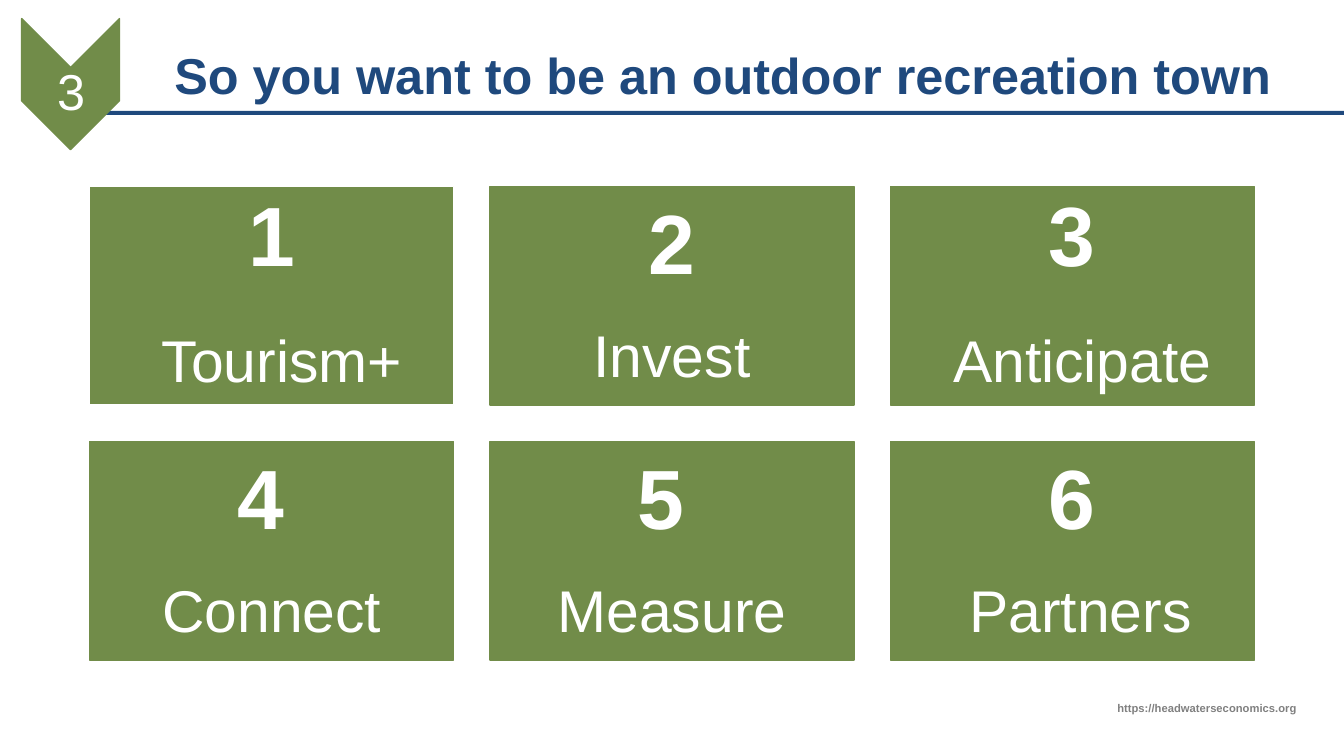
"""Build the slide with six steps for an outdoor recreation town."""
from dataclasses import dataclass
from pptx import Presentation
from pptx.dml.color import RGBColor as Rgb
from pptx.enum.shapes import MSO_SHAPE as Kind
from pptx.enum.text import MSO_ANCHOR as Anchor, PP_ALIGN as Align
from pptx.util import Inches, Pt

TITLE = "So you want to be an outdoor recreation town"
BADGE = "3"
SITE = "https://headwaterseconomics.org"
STEPS = [
    [[("1", 60)], [(" ", 52), ("Tourism+", 42)]],
    [[("2", 60)], [("Invest", 42)]],
    [[("3", 60)], [(" ", 52), ("Anticipate", 42)]],
    [[("4", 60), (" ", 57)], [("Connect", 42)]],
    [[("5", 60), (" ", 57)], [("Measure", 42)]],
    [[("6", 60)], [(" Partners", 42)]],
]
COLS = 3
LEFT, TOP, WIDE, HIGH = 0.89, 1.85, 3.61, 2.17
STEP_X, STEP_Y = 3.97, 2.53


@dataclass(frozen=True)
class Theme:
    """Colours, font and type sizes."""
    green: Rgb = Rgb(0x71, 0x8C, 0x49)
    navy: Rgb = Rgb(0x1F, 0x49, 0x7D)
    white: Rgb = Rgb(0xFF, 0xFF, 0xFF)
    grey: Rgb = Rgb(0x80, 0x80, 0x80)
    font: str = "Arial"
    head: int = 36
    digit: int = 60
    foot: int = 8
    gap: float = 24.7


theme = Theme()


def style(run, size, color, bold=False):
    """Format one run."""
    font = run.font
    font.name, font.size, font.bold = theme.font, Pt(size), bold
    font.color.rgb = color


def add_block(slide, kind, box, fill, line=None):
    """Add a filled shape."""
    shape = slide.shapes.add_shape(kind, *map(Inches, box))
    shape.shadow.inherit = False
    shape.fill.solid()
    shape.fill.fore_color.rgb = fill
    if line is None:
        shape.line.fill.background()
    else:
        shape.line.color.rgb = line
        shape.line.width = Pt(1)
    return shape


def set_inset(frame, size):
    """Set all four margins and centre the text vertically."""
    frame.margin_left = frame.margin_right = Inches(size)
    frame.margin_top = frame.margin_bottom = Inches(size)
    frame.vertical_anchor = Anchor.MIDDLE


def add_label(slide, box, text, size, color, align, bold=True, space=None):
    """Add a text box with one line."""
    frame = slide.shapes.add_textbox(*map(Inches, box)).text_frame
    frame.word_wrap = True
    frame.text = text
    para = frame.paragraphs[0]
    para.alignment, para.line_spacing = align, space
    style(para.runs[0], size, color, bold)
    return frame


def add_step(slide, index, lines):
    """Add one card of the grid."""
    row, col = divmod(index, COLS)
    box = (LEFT + col * STEP_X, TOP + row * STEP_Y, WIDE, HIGH)
    line = theme.green if index else theme.white
    frame = add_block(slide, Kind.RECTANGLE, box, theme.green, line).text_frame
    frame.word_wrap = True
    set_inset(frame, 0.25)
    for num, parts in enumerate(lines):
        para = frame.add_paragraph() if num else frame.paragraphs[0]
        para.alignment, para.line_spacing = Align.CENTER, 0.9
        para.space_after = Pt(0 if num else theme.gap)
        for text, size in parts:
            run = para.add_run()
            run.text = text
            style(run, size, theme.white, size == theme.digit)


def main():
    """Make and save the slide."""
    deck = Presentation()
    deck.slide_width, deck.slide_height = Inches(13.33), Inches(7.5)
    slide = deck.slides.add_slide(deck.slide_layouts[6])
    add_block(slide, Kind.RECTANGLE, (1, 1.1, 12.33, 0.04), theme.navy)
    add_label(slide, (8.72, 6.91, 4.24, 0.24), SITE, theme.foot, theme.grey, Align.RIGHT)
    title = add_label(slide, (1.63, 0.4, 11.25, 0.7), TITLE, theme.head,
                      theme.navy, Align.LEFT, space=0.9)
    title.vertical_anchor = Anchor.BOTTOM
    arrow = add_block(slide, Kind.CHEVRON, (0.05, 0.35, 1.3, 0.97), theme.green, theme.green)
    arrow.rotation = 90
    badge = add_label(slide, (0.22, 0.74, 0.97, 0.39), BADGE, theme.head,
                      theme.white, Align.CENTER, False, 0.9)
    set_inset(badge, 0.03)
    for index, lines in enumerate(STEPS):
        add_step(slide, index, lines)
    deck.save("out.pptx")


if __name__ == "__main__":
    main()
